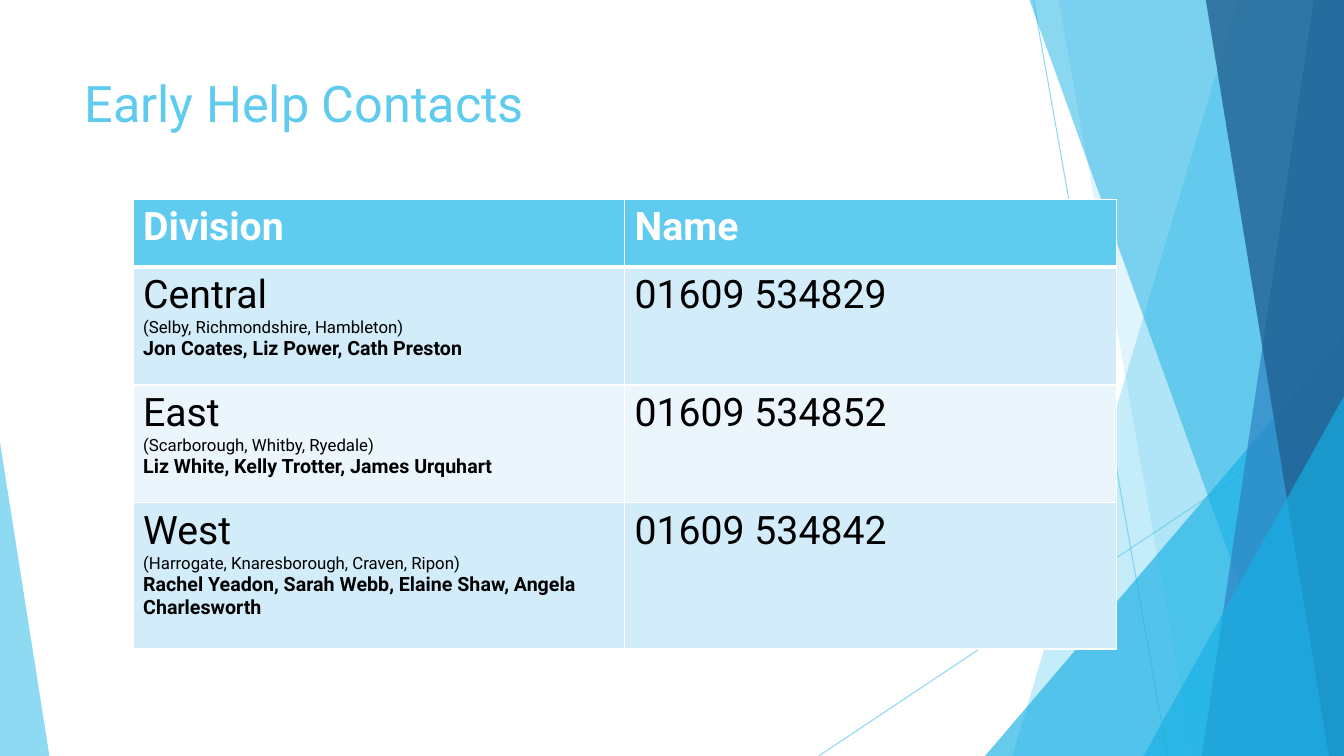
import pptx
import pptx.dml.color
import pptx.enum.shapes
import pptx.enum.text
import pptx.oxml
import pptx.oxml.ns
import pptx.util

Inches = pptx.util.Inches
RGBColor = pptx.dml.color.RGBColor
SHAPE = pptx.enum.shapes.MSO_SHAPE

SKY = RGBColor(0x5F, 0xCB, 0xEF)
CYAN = RGBColor(0x17, 0xB0, 0xE4)
BLUE = RGBColor(0x2E, 0x83, 0xC3)
NAVY = RGBColor(0x22, 0x62, 0x92)
PALE = RGBColor(0xD2, 0xEC, 0xF9)
PALER = RGBColor(0xEA, 0xF6, 0xFC)
WHITE = RGBColor(0xFF, 0xFF, 0xFF)
BLACK = RGBColor(0x00, 0x00, 0x00)

WIDTH, HEIGHT = 13.33, 7.5

DIVISIONS = [
    ("Central", "(Selby, Richmondshire, Hambleton)",
     "Jon Coates, Liz Power, Cath Preston", "01609 534829"),
    ("East", "(Scarborough, Whitby, Ryedale)",
     "Liz White, Kelly Trotter, James Urquhart", "01609 534852"),
    ("West", "(Harrogate, Knaresborough, Craven, Ripon)",
     "Rachel Yeadon, Sarah Webb, Elaine Shaw, Angela Charlesworth", "01609 534842"),
]


class SlideBuilder:
    font_name = "Roboto"

    def __init__(self, slide):
        self.slide = slide
        self.shapes = slide.shapes

    def set_opacity(self, fill_parent, percent):
        for color in fill_parent.iter(pptx.oxml.ns.qn("a:srgbClr")):
            alpha = pptx.oxml.parse_xml(
                f'<a:alpha {pptx.oxml.ns.nsdecls("a")} val="{percent * 1000}"/>')
            color.append(alpha)

    def paint(self, shape, color, opacity):
        shape.shadow.inherit = False
        shape.line.fill.background()
        shape.fill.solid()
        shape.fill.fore_color.rgb = color
        self.set_opacity(shape._element.spPr, opacity)

    def line(self, start, end):
        connector = self.shapes.add_connector(
            pptx.enum.shapes.MSO_CONNECTOR.STRAIGHT,
            *[Inches(value) for value in (*start, *end)])
        connector.line.color.rgb = SKY
        connector.line.width = pptx.util.Pt(0.75)
        properties = connector._element.spPr
        self.set_opacity(properties, 70)
        properties.append(pptx.oxml.parse_xml(
            f'<a:effectLst {pptx.oxml.ns.nsdecls("a")}/>'))

    def right_panel(self, top_left, bottom_left, color, opacity):
        builder = self.shapes.build_freeform(Inches(top_left), 0, scale=1.0)
        corners = [(WIDTH, 0), (WIDTH, HEIGHT), (bottom_left, HEIGHT)]
        builder.add_line_segments([(Inches(x), Inches(y)) for x, y in corners], close=True)
        self.paint(builder.convert_to_shape(), color, opacity)

    def triangle(self, left, top, width, apex, color, opacity):
        shape = self.shapes.add_shape(
            SHAPE.ISOSCELES_TRIANGLE, Inches(left), Inches(top),
            Inches(width), Inches(HEIGHT - top))
        shape.adjustments[0] = apex
        self.paint(shape, color, opacity)

    def format_paragraph(self, paragraph, size, color, bold=False):
        for run in paragraph.runs:
            run.font.name = self.font_name
            run.font.size = pptx.util.Pt(size)
            run.font.bold = bold
            run.font.color.rgb = color

    def title(self, text):
        box = self.shapes.add_textbox(Inches(0.74), Inches(0.67), Inches(9.4), Inches(1.44))
        frame = box.text_frame
        frame.word_wrap = True
        frame.vertical_anchor = pptx.enum.text.MSO_ANCHOR.TOP
        frame.text = text
        self.format_paragraph(frame.paragraphs[0], 36, SKY)

    def cell(self, cell, lines, fill, color, styles, bottom_width=1):
        cell.text_frame.text = "\n".join(lines)
        for paragraph, (size, bold) in zip(cell.text_frame.paragraphs, styles):
            self.format_paragraph(paragraph, size, color, bold)
        properties = cell._tc.get_or_add_tcPr()
        for side, points in (("L", 1), ("R", 1), ("T", 1), ("B", bottom_width)):
            properties.append(pptx.oxml.parse_xml(
                f'<a:ln{side} {pptx.oxml.ns.nsdecls("a")} w="{pptx.util.Pt(points)}">'
                f'<a:solidFill><a:srgbClr val="{WHITE}"/></a:solidFill></a:ln{side}>'))
        cell.fill.solid()
        cell.fill.fore_color.rgb = fill

    def contacts_table(self, headings, divisions):
        heights = [0.67, 1.17, 1.17, 1.45]
        table = self.shapes.add_table(
            len(divisions) + 1, len(headings), Inches(1.32), Inches(1.98),
            Inches(9.75), Inches(sum(heights))).table
        for row, height in zip(table.rows, heights):
            row.height = Inches(height)
        for column, heading in enumerate(headings):
            self.cell(table.cell(0, column), [heading], SKY, WHITE, [(28, True)], 3)
        for row, (division, areas, people, phone) in enumerate(divisions, 1):
            fill = PALE if row % 2 else PALER
            self.cell(table.cell(row, 0), [division, areas, people], fill, BLACK,
                      [(28, False), (12, False), (14, True)])
            self.cell(table.cell(row, 1), [phone], fill, BLACK, [(28, False)])


def main():
    presentation = pptx.Presentation()
    presentation.slide_width = Inches(WIDTH)
    presentation.slide_height = Inches(HEIGHT)
    builder = SlideBuilder(presentation.slides.add_slide(presentation.slide_layouts[6]))

    builder.line((10.25, 0), (11.58, HEIGHT))
    builder.line((WIDTH, 4.03), (8.12, HEIGHT))
    builder.right_panel(12.28, 10.04, SKY, 36)
    builder.right_panel(10.5, 11.83, SKY, 20)
    builder.triangle(9.77, 3.33, 3.56, 1, CYAN, 66)
    builder.right_panel(10.21, 12.91, CYAN, 50)
    builder.right_panel(13.03, 11.92, BLUE, 70)
    builder.right_panel(11.96, 13.18, NAVY, 80)
    builder.triangle(11.34, 3.93, 1.99, 1, CYAN, 66)
    builder.triangle(0, 4.39, 0.49, 0, SKY, 70)

    builder.title("Early Help Contacts")
    builder.contacts_table(["Division", "Name"], DIVISIONS)
    presentation.save("out.pptx")


if __name__ == "__main__":
    main()
